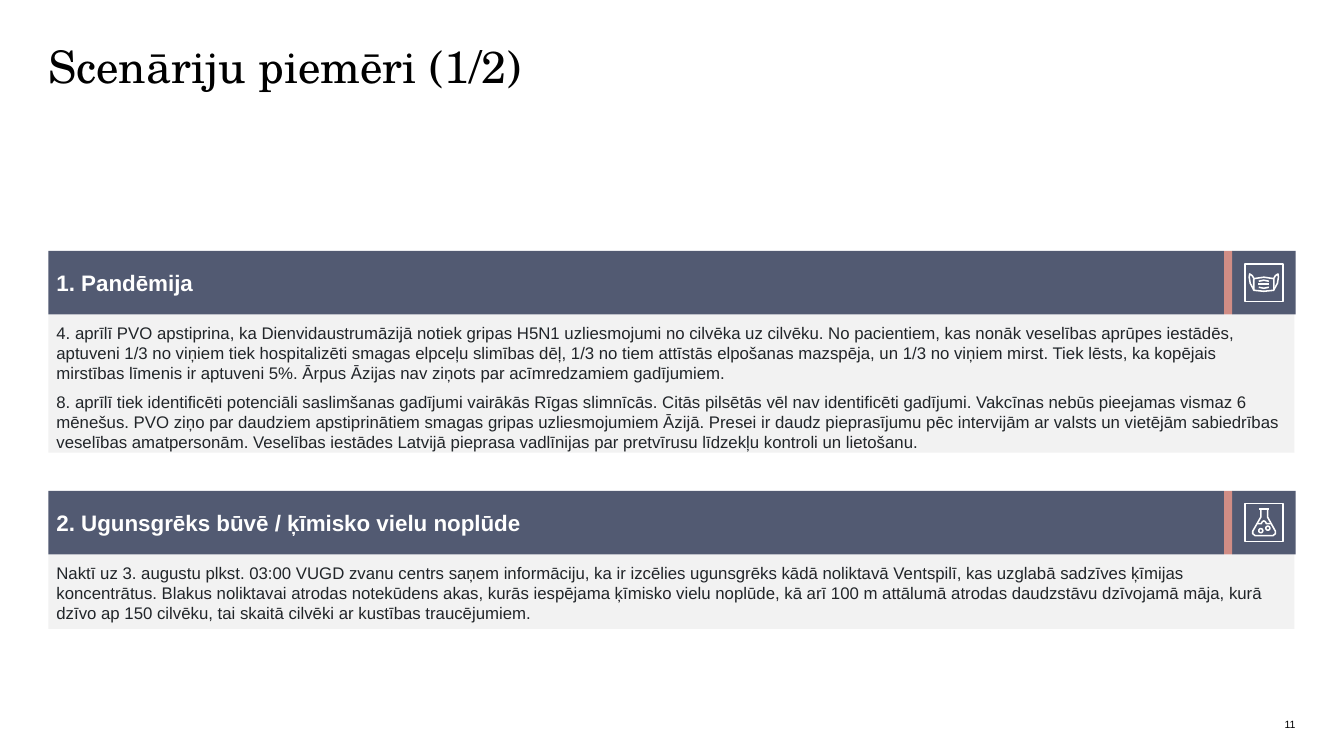
from dataclasses import dataclass
from math import cos, pi, sin

from pptx import Presentation
from pptx.dml.color import RGBColor
from pptx.enum.shapes import MSO_SHAPE
from pptx.enum.text import MSO_ANCHOR, PP_ALIGN
from pptx.shapes.autoshape import Shape
from pptx.slide import Slide
from pptx.text.text import TextFrame
from pptx.util import Inches, Pt

RECTANGLE = MSO_SHAPE.RECTANGLE
TOP, MIDDLE, BOTTOM = MSO_ANCHOR.TOP, MSO_ANCHOR.MIDDLE, MSO_ANCHOR.BOTTOM
LEFT, RIGHT = PP_ALIGN.LEFT, PP_ALIGN.RIGHT

SLATE, ROSE, PALE = "525A72", "D18D85", "F2F2F2"
BLACK, WHITE, INK = "000000", "FFFFFF", "212529"

MARGIN, CONTENT_WIDTH = 0.48, 12.36
HEADER_HEIGHT, HEADER_WIDTH, STRIPE_WIDTH = 0.63, 11.66, 0.08
ICON_INSET = 0.12
PADDING = 0.08

Point = tuple[float, float]


@dataclass(frozen=True)
class Stroke:
    """One outline of an icon, in hundredths of an inch from the icon's corner."""
    points: list[Point]
    closed: bool = False


@dataclass(frozen=True)
class TextStyle:
    size: float
    color: str
    name: str = "Arial"
    bold: bool = False
    align: PP_ALIGN = LEFT
    anchor: MSO_ANCHOR = TOP
    padding: float = 0
    space_after: float = 0
    line_spacing: float = 1.0


@dataclass(frozen=True)
class Scenario:
    top: float
    body_height: float
    heading: str
    paragraphs: list[str]
    icon: list[Stroke]


TITLE = TextStyle(32, BLACK, name="TeX Gyre Schola", line_spacing=0.85)
PAGE_NUMBER = TextStyle(7.5, BLACK, align=RIGHT, anchor=BOTTOM)
HEADING = TextStyle(16, WHITE, bold=True, anchor=MIDDLE, padding=PADDING)
BODY = TextStyle(12, INK, padding=PADDING, space_after=6)


def circle(x: float, y: float, radius: float, steps: int = 16) -> Stroke:
    angles = [2 * pi * step / steps for step in range(steps)]
    return Stroke([(x + radius * cos(a), y + radius * sin(a)) for a in angles], True)


FRAME = Stroke([(0.7, 0.7), (38.3, 0.7), (38.3, 38.3), (0.7, 38.3)], True)
EAR_LOOP = [(9.5, 15), (8, 12.5), (5.5, 10.8), (5, 14), (6, 20), (9.5, 26.5)]
MASK_ICON = [
    FRAME,
    Stroke([(9.5, 15.5), (19.5, 14), (29.5, 15.5), (29.5, 27), (19.5, 28), (9.5, 27)], True),
    Stroke(EAR_LOOP),
    Stroke([(39 - x, y) for x, y in EAR_LOOP]),
    Stroke([(14.5, 18), (19.5, 17), (24.5, 18)]),
    Stroke([(14, 21), (25, 21)]),
    Stroke([(14.5, 24), (19.5, 25), (24.5, 24)]),
]
FLASK_ICON = [
    FRAME,
    Stroke([(15, 6), (25, 6)]),
    Stroke([(16.5, 6), (16.5, 14), (8.5, 28), (8.5, 30.5), (11, 32.5), (28.5, 32.5),
            (31, 30.5), (31, 28), (23.2, 14), (23.2, 6)]),
    Stroke([(13, 20.5), (17, 20.5), (18, 18.5), (19.5, 17.8), (21, 18.5), (22, 20.5),
            (26.5, 20.5)]),
    circle(23.5, 25, 2),
    circle(16.5, 27.5, 2),
]

SCENARIOS = [
    Scenario(2.49, 1.37, "1. Pandēmija", [
        "4. aprīlī PVO apstiprina, ka Dienvidaustrumāzijā notiek gripas H5N1 uzliesmojumi no "
        "cilvēka uz cilvēku. No pacientiem, kas nonāk veselības aprūpes iestādēs, aptuveni 1/3 "
        "no viņiem tiek hospitalizēti smagas elpceļu slimības dēļ, 1/3 no tiem attīstās "
        "elpošanas mazspēja, un 1/3 no viņiem mirst. Tiek lēsts, ka kopējais mirstības līmenis "
        "ir aptuveni 5%. Ārpus Āzijas nav ziņots par acīmredzamiem gadījumiem.",
        "8. aprīlī tiek identificēti potenciāli saslimšanas gadījumi vairākās Rīgas slimnīcās. "
        "Citās pilsētās vēl nav identificēti gadījumi. Vakcīnas nebūs pieejamas vismaz 6 "
        "mēnešus. PVO ziņo par daudziem apstiprinātiem smagas gripas uzliesmojumiem Āzijā. "
        "Presei ir daudz pieprasījumu pēc intervijām ar valsts un vietējām sabiedrības "
        "veselības amatpersonām. Veselības iestādes Latvijā pieprasa vadlīnijas par pretvīrusu "
        "līdzekļu kontroli un lietošanu.",
    ], MASK_ICON),
    Scenario(4.87, 0.74, "2. Ugunsgrēks būvē / ķīmisko vielu noplūde", [
        "Naktī uz 3. augustu plkst. 03:00 VUGD zvanu centrs saņem informāciju, ka ir izcēlies "
        "ugunsgrēks kādā noliktavā Ventspilī, kas uzglabā sadzīves ķīmijas koncentrātus. Blakus "
        "noliktavai atrodas notekūdens akas, kurās iespējama ķīmisko vielu noplūde, kā arī "
        "100 m attālumā atrodas daudzstāvu dzīvojamā māja, kurā dzīvo ap 150 cilvēku, tai "
        "skaitā cilvēki ar kustības traucējumiem.",
    ], FLASK_ICON),
]


def rgb(value: str) -> RGBColor:
    return RGBColor.from_string(value)


def apply(target: object, values: dict[str, object]) -> None:
    for name, value in values.items():
        setattr(target, name, value)


def write(frame: TextFrame, texts: list[str], style: TextStyle) -> None:
    margins = dict.fromkeys(
        ("margin_left", "margin_top", "margin_right", "margin_bottom"), Inches(style.padding))
    apply(frame, {"word_wrap": True, "vertical_anchor": style.anchor, **margins})
    for index, text in enumerate(texts):
        para = frame.add_paragraph() if index else frame.paragraphs[0]
        apply(para, {"alignment": style.align, "line_spacing": style.line_spacing,
                     "space_after": Pt(style.space_after)})
        span = para.add_run()
        span.text = text
        apply(span.font, {"name": style.name, "size": Pt(style.size), "bold": style.bold})
        span.font.color.rgb = rgb(style.color)


def add_text(page: Slide, left: float, top: float, width: float, height: float,
             text: str, style: TextStyle) -> None:
    box = page.shapes.add_textbox(Inches(left), Inches(top), Inches(width), Inches(height))
    write(box.text_frame, [text], style)


def add_panel(page: Slide, left: float, top: float, width: float, height: float,
              color: str) -> Shape:
    panel = page.shapes.add_shape(
        RECTANGLE, Inches(left), Inches(top), Inches(width), Inches(height))
    panel.shadow.inherit = False
    panel.fill.solid()
    panel.fill.fore_color.rgb = rgb(color)
    panel.line.fill.background()
    return panel


def add_icon(page: Slide, left: float, top: float, strokes: list[Stroke]) -> None:
    outlines = [[(Inches(x / 100), Inches(y / 100)) for x, y in stroke.points]
                for stroke in strokes]
    builder = page.shapes.build_freeform(*outlines[0][0])
    for index, (stroke, points) in enumerate(zip(strokes, outlines)):
        if index:
            builder.move_to(*points[0])
        builder.add_line_segments(points[1:], close=stroke.closed)
    icon = builder.convert_to_shape(Inches(left), Inches(top))
    icon.shadow.inherit = False
    icon.fill.background()
    icon.line.color.rgb = rgb(WHITE)
    icon.line.width = Pt(1.1)


def add_scenario(page: Slide, scenario: Scenario) -> None:
    top = scenario.top
    body = add_panel(page, MARGIN, top + HEADER_HEIGHT, CONTENT_WIDTH,
                     scenario.body_height, PALE)
    write(body.text_frame, scenario.paragraphs, BODY)
    header = add_panel(page, MARGIN, top, HEADER_WIDTH, HEADER_HEIGHT, SLATE)
    write(header.text_frame, [scenario.heading], HEADING)
    stripe_left = MARGIN + HEADER_WIDTH
    tile_left = stripe_left + STRIPE_WIDTH
    add_panel(page, tile_left, top, HEADER_HEIGHT, HEADER_HEIGHT, SLATE)
    add_panel(page, stripe_left, top, STRIPE_WIDTH, HEADER_HEIGHT, ROSE)
    add_icon(page, tile_left + ICON_INSET, top + ICON_INSET, scenario.icon)


def main() -> None:
    deck = Presentation()
    apply(deck, {"slide_width": Inches(13.33), "slide_height": Inches(7.5)})
    page = deck.slides.add_slide(deck.slide_layouts[6])
    add_text(page, MARGIN, 0.47, CONTENT_WIDTH, 1.52, "Scenāriju piemēri (1/2)", TITLE)
    add_text(page, 10.92, 7.1, 1.93, 0.15, "11", PAGE_NUMBER)
    for scenario in SCENARIOS:
        add_scenario(page, scenario)
    deck.save("out.pptx")


if __name__ == "__main__":
    main()
